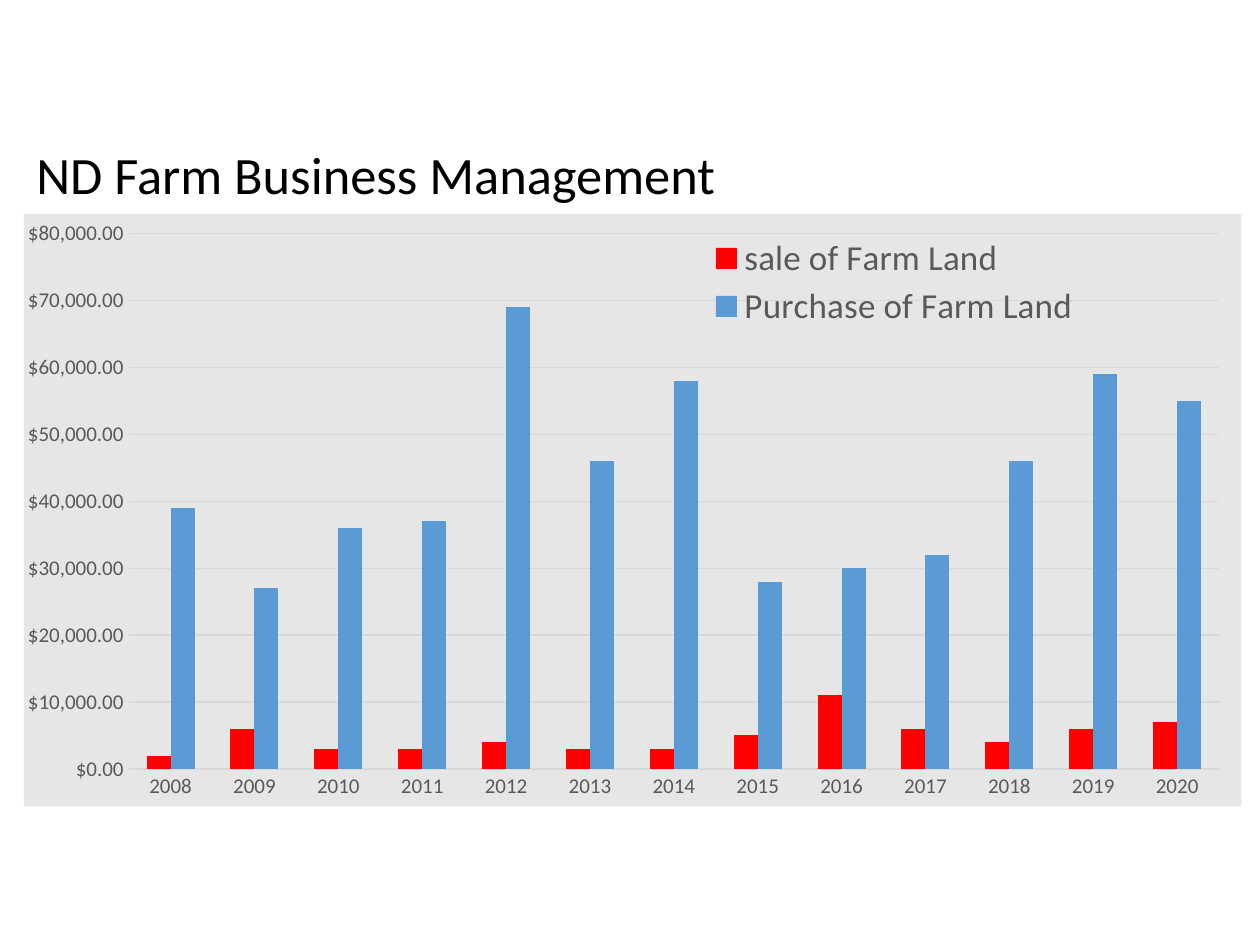
from lxml.etree import SubElement
from pptx import Presentation
from pptx.chart.data import CategoryChartData
from pptx.dml.color import RGBColor
from pptx.enum.chart import XL_CHART_TYPE, XL_LEGEND_POSITION, XL_TICK_MARK
from pptx.enum.text import MSO_ANCHOR
from pptx.oxml import parse_xml
from pptx.oxml.ns import nsdecls, qn
from pptx.util import Inches, Pt

BLACK = RGBColor(0x00, 0x00, 0x00)
GRAY = RGBColor(0x59, 0x59, 0x59)
GRID = RGBColor(0xD9, 0xD9, 0xD9)
PANEL = RGBColor(0xE7, 0xE6, 0xE6)
RED = RGBColor(0xFF, 0x00, 0x00)
BLUE = RGBColor(0x5B, 0x9B, 0xD5)

YEARS = [str(year) for year in range(2008, 2021)]
SALES = [2000, 6000, 3000, 3000, 4000, 3000, 3000,
         5000, 11000, 6000, 4000, 6000, 7000]
PURCHASES = [39000, 27000, 36000, 37000, 69000, 46000, 58000,
             28000, 30000, 32000, 46000, 59000, 55000]
SERIES = [("sale of Farm Land", SALES, RED),
          ("Purchase of Farm Land", PURCHASES, BLUE)]


class FarmSlide:
    typeface = "Calibri"

    def __init__(self, page):
        self.page = page

    def style_font(self, font, size, color):
        font.name = self.typeface
        font.size = Pt(size)
        font.color.rgb = color

    def title(self, text, left, top, width, height):
        box = self.page.shapes.add_textbox(
            Inches(left), Inches(top), Inches(width), Inches(height))
        frame = box.text_frame
        frame.word_wrap = True
        frame.vertical_anchor = MSO_ANCHOR.MIDDLE
        para = frame.paragraphs[0]
        para.text = text
        para.line_spacing = 0.9
        self.style_font(para.font, 30, BLACK)

    def place(self, element, index, target, left, top, width, height):
        for old_layout in element.findall(qn("c:layout")):
            element.remove(old_layout)
        layout = parse_xml(f"<c:layout {nsdecls('c')}/>")
        manual = SubElement(layout, qn("c:manualLayout"))
        settings = [("xMode", "edge"), ("yMode", "edge"),
                    ("x", left), ("y", top), ("w", width), ("h", height)]
        if target:
            settings.insert(0, ("layoutTarget", target))
        for name, value in settings:
            SubElement(manual, qn(f"c:{name}")).set("val", str(value))
        element.insert(index, layout)

    def fill_panel(self, chart, color):
        panel = parse_xml(
            f"<c:spPr {nsdecls('c', 'a')}><a:solidFill>"
            f'<a:srgbClr val="{color}"/></a:solidFill>'
            "<a:ln><a:noFill/></a:ln></c:spPr>")
        chart.element.find(qn("c:chart")).addnext(panel)

    def axis(self, axis):
        axis.major_tick_mark = XL_TICK_MARK.NONE
        axis.minor_tick_mark = XL_TICK_MARK.NONE
        axis.format.line.fill.background()
        self.style_font(axis.tick_labels.font, 12, GRAY)

    def legend(self, chart):
        chart.has_legend = True
        legend = chart.legend
        legend.position = XL_LEGEND_POSITION.BOTTOM
        legend.include_in_layout = False
        self.style_font(legend.font, 20, GRAY)
        self.place(legend._element, 1, None, 0.56, 0.03, 0.31, 0.17)

    def column_chart(self, categories, series, left, top, width, height):
        data = CategoryChartData()
        data.categories = categories
        for name, values, color in series:
            data.add_series(name, values)
        chart = self.page.shapes.add_chart(
            XL_CHART_TYPE.COLUMN_CLUSTERED, Inches(left), Inches(top),
            Inches(width), Inches(height), data).chart
        chart.has_title = False
        self.style_font(chart.font, 12, BLACK)
        self.fill_panel(chart, PANEL)

        plot = chart.plots[0]
        plot.gap_width = 150
        plot.overlap = 0
        plot.vary_by_categories = False
        for columns, (name, values, color) in zip(plot.series, series):
            columns.format.fill.solid()
            columns.format.fill.fore_color.rgb = color

        self.axis(chart.category_axis)
        value_axis = chart.value_axis
        self.axis(value_axis)
        value_axis.minimum_scale = 0
        value_axis.maximum_scale = 80000
        value_axis.major_unit = 10000
        value_axis.tick_labels.number_format = '"$"#,##0.00'
        value_axis.tick_labels.number_format_is_linked = False
        value_axis.has_major_gridlines = True
        grid_line = value_axis.major_gridlines.format.line
        grid_line.color.rgb = GRID
        grid_line.width = Pt(0.75)

        plot_area = chart.element.find(".//" + qn("c:plotArea"))
        self.place(plot_area, 0, "inner", 0.086, 0.033, 0.896, 0.904)
        self.legend(chart)


def main():
    deck = Presentation()
    deck.slide_width = Inches(10)
    deck.slide_height = Inches(7.5)
    slide = FarmSlide(deck.slides.add_slide(deck.slide_layouts[6]))
    slide.column_chart(YEARS, SERIES, 0.19, 1.7, 9.66, 4.7)
    slide.title("ND Farm Business Management", 0.19, 0.94, 9.66, 0.94)
    deck.save("out.pptx")


if __name__ == "__main__":
    main()
